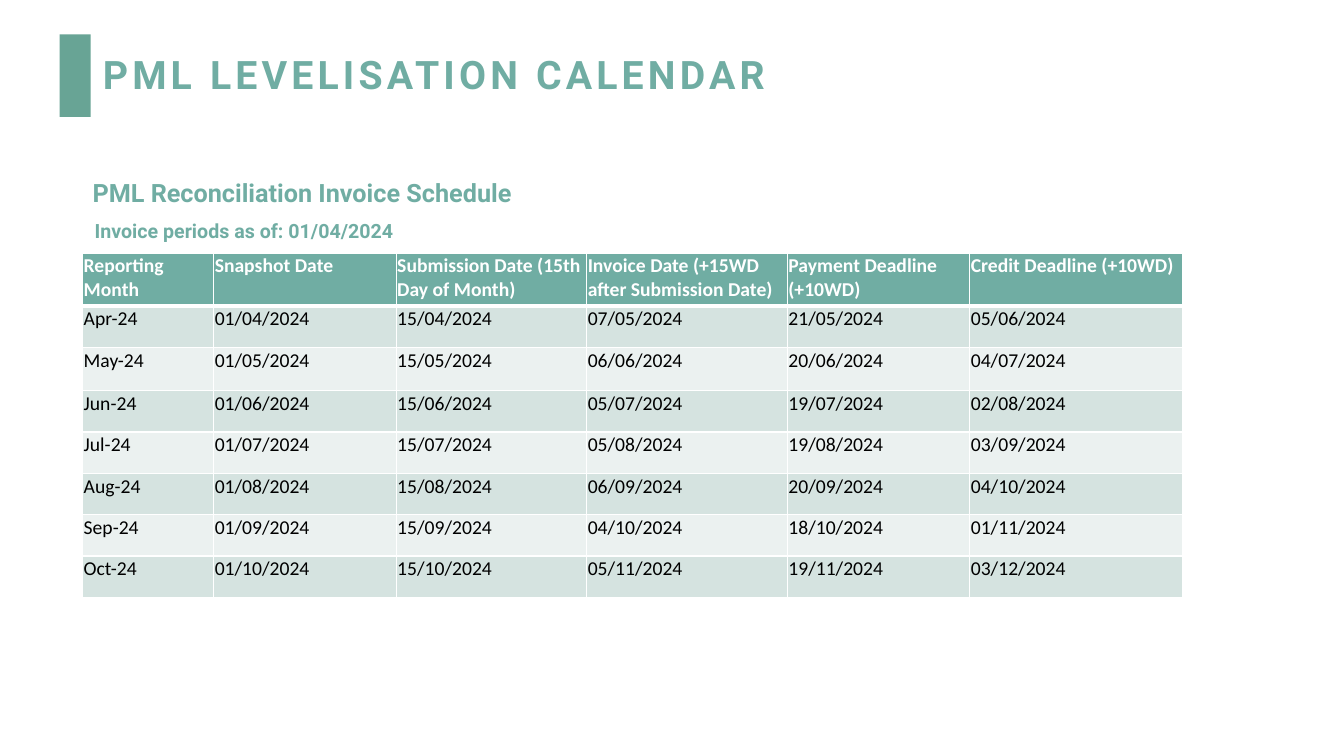
from dataclasses import dataclass

from lxml import etree
from pptx import Presentation
from pptx import util as u
from pptx.dml.color import RGBColor
from pptx.enum import shapes, text
from pptx.oxml import ns

GREEN, BAR_GREEN, WHITE, BLACK = "70ADA3", "68A495", "FFFFFF", "000000"
BANDS = ("D5E3E0", "EBF1F0")
COLUMN_WIDTHS = (1.3, 1.81, 1.89, 1.99, 1.81, 2.11)
ROW_HEIGHTS = (0.32, 0.41, 0.43, 0.41, 0.41, 0.41, 0.41, 0.41)
HEADERS = (
    "Reporting Month",
    "Snapshot Date",
    "Submission Date (15th Day of Month)",
    "Invoice Date (+15WD after Submission Date)",
    "Payment Deadline (+10WD)",
    "Credit Deadline (+10WD)",
)
SCHEDULE = (
    ("Apr-24", "01/04/2024", "15/04/2024", "07/05/2024", "21/05/2024", "05/06/2024"),
    ("May-24", "01/05/2024", "15/05/2024", "06/06/2024", "20/06/2024", "04/07/2024"),
    ("Jun-24", "01/06/2024", "15/06/2024", "05/07/2024", "19/07/2024", "02/08/2024"),
    ("Jul-24", "01/07/2024", "15/07/2024", "05/08/2024", "19/08/2024", "03/09/2024"),
    ("Aug-24", "01/08/2024", "15/08/2024", "06/09/2024", "20/09/2024", "04/10/2024"),
    ("Sep-24", "01/09/2024", "15/09/2024", "04/10/2024", "18/10/2024", "01/11/2024"),
    ("Oct-24", "01/10/2024", "15/10/2024", "05/11/2024", "19/11/2024", "03/12/2024"),
)


@dataclass
class Heading:
    words: str
    left: float
    top: float
    height: float
    size: int


HEADINGS = (
    Heading("PML Reconciliation Invoice Schedule", 0.82, 1.71, 0.4, 18),
    Heading("Invoice periods as of: 01/04/2024", 0.84, 2.12, 0.34, 14),
)


def color(value: str) -> RGBColor:
    return RGBColor.from_string(value)


def add_run(paragraph, words: str, size: int, font: str, ink: str, bold: bool):
    run = paragraph.add_run()
    run.text = words
    run.font.size = u.Pt(size)
    run.font.name = font
    run.font.bold = bold
    run.font.color.rgb = color(ink)
    return run


def format_title(title) -> None:
    title.left, title.top = u.Inches(0.92), u.Inches(0.4)
    title.width, title.height = u.Inches(10.15), u.Inches(0.72)
    frame = title.text_frame
    frame.word_wrap = True
    frame.auto_size = text.MSO_AUTO_SIZE.NONE
    frame.vertical_anchor = text.MSO_ANCHOR.MIDDLE
    paragraph = frame.paragraphs[0]
    paragraph.alignment = text.PP_ALIGN.LEFT
    paragraph.line_spacing = 0.9
    run = add_run(paragraph, "PML LEVELISATION CALENDAR", 28, "Roboto", GREEN, True)
    run.font._element.set("spc", "300")


def add_accent_bar(slide) -> None:
    bar = slide.shapes.add_shape(
        shapes.MSO_SHAPE.RECTANGLE,
        u.Inches(0.59), u.Inches(0.34), u.Inches(0.31), u.Inches(0.82),
    )
    bar.shadow.inherit = False
    bar.fill.solid()
    bar.fill.fore_color.rgb = color(BAR_GREEN)
    bar.line.fill.background()


def add_heading(slide, heading: Heading) -> None:
    box = slide.shapes.add_textbox(
        u.Inches(heading.left), u.Inches(heading.top), u.Inches(5.44), u.Inches(heading.height)
    )
    frame = box.text_frame
    frame.word_wrap = True
    frame.auto_size = text.MSO_AUTO_SIZE.SHAPE_TO_FIT_TEXT
    add_run(frame.paragraphs[0], heading.words, heading.size, "Roboto", GREEN, True)


def add_border(cell, side: str, points: float) -> None:
    properties = cell._tc.get_or_add_tcPr()
    line = etree.SubElement(properties, ns.qn(f"a:ln{side}"), w=str(u.Pt(points)))
    fill = etree.SubElement(line, ns.qn("a:solidFill"))
    etree.SubElement(fill, ns.qn("a:srgbClr"), val=WHITE)


def format_cell(cell, words: str, row: int) -> None:
    is_header = row == 0
    cell.margin_left = cell.margin_right = cell.margin_top = u.Inches(0.01)
    cell.margin_bottom = u.Inches(0.05)
    for side in "LRTB":
        thick = (is_header and side == "B") or (row == 1 and side == "T")
        add_border(cell, side, 3 if thick else 1)
    cell.fill.solid()
    cell.fill.fore_color.rgb = color(GREEN if is_header else BANDS[(row - 1) % 2])
    ink = WHITE if is_header else BLACK
    add_run(cell.text_frame.paragraphs[0], words, 14, "Calibri", ink, is_header)


def add_schedule(slide) -> None:
    rows = (HEADERS, *SCHEDULE)
    table = slide.shapes.add_table(
        len(rows), len(HEADERS),
        u.Inches(0.82), u.Inches(2.51), u.Inches(sum(COLUMN_WIDTHS)), u.Inches(sum(ROW_HEIGHTS)),
    ).table
    for column, width in zip(table.columns, COLUMN_WIDTHS):
        column.width = u.Inches(width)
    for table_row, height in zip(table.rows, ROW_HEIGHTS):
        table_row.height = u.Inches(height)
    for row, values in enumerate(rows):
        for column, words in enumerate(values):
            format_cell(table.cell(row, column), words, row)


def main() -> None:
    presentation = Presentation()
    presentation.slide_width = u.Inches(13.33)
    presentation.slide_height = u.Inches(7.5)
    slide = presentation.slides.add_slide(presentation.slide_layouts[5])
    format_title(slide.shapes.title)
    add_accent_bar(slide)
    for heading in HEADINGS:
        add_heading(slide, heading)
    add_schedule(slide)
    presentation.save("out.pptx")


if __name__ == "__main__":
    main()
